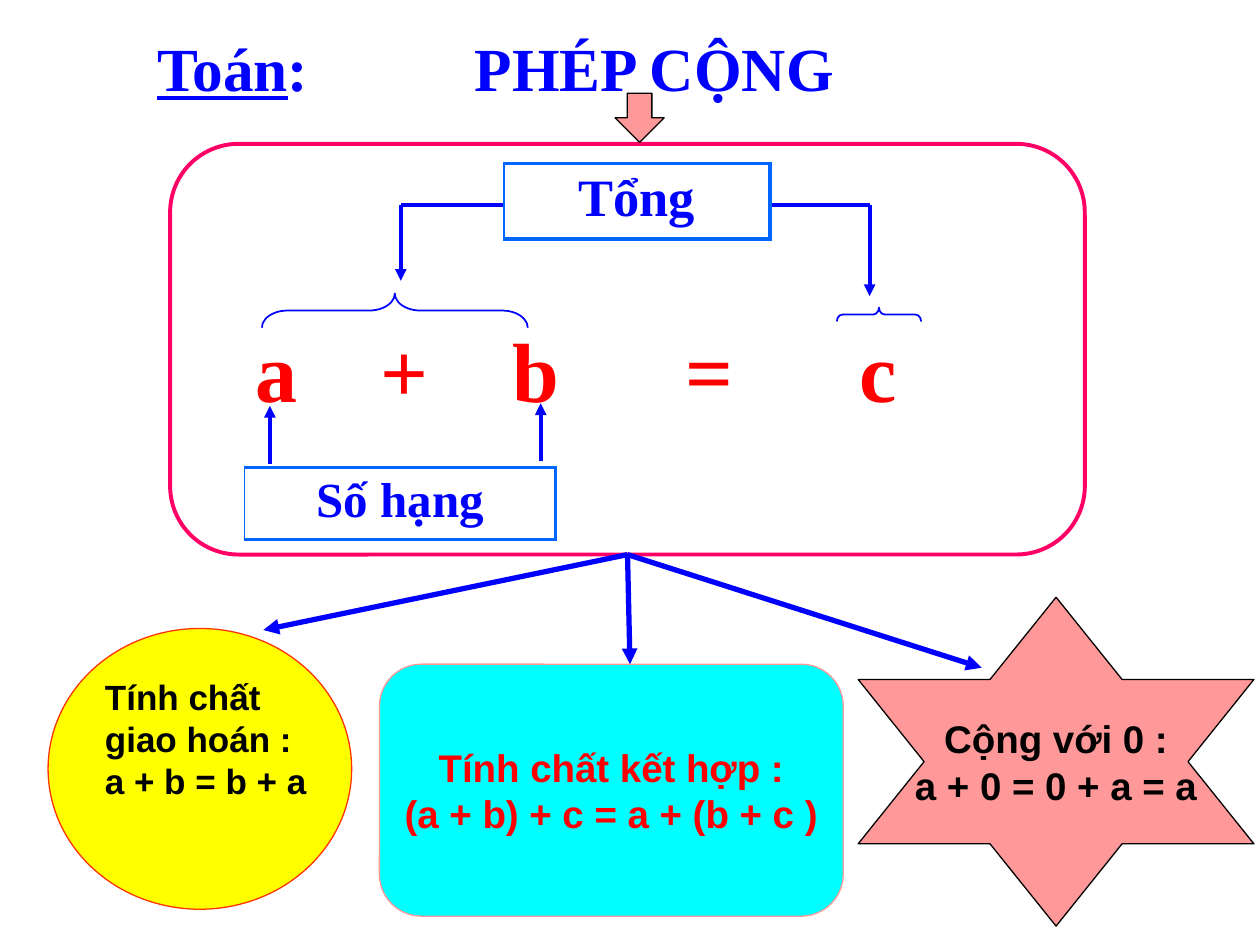
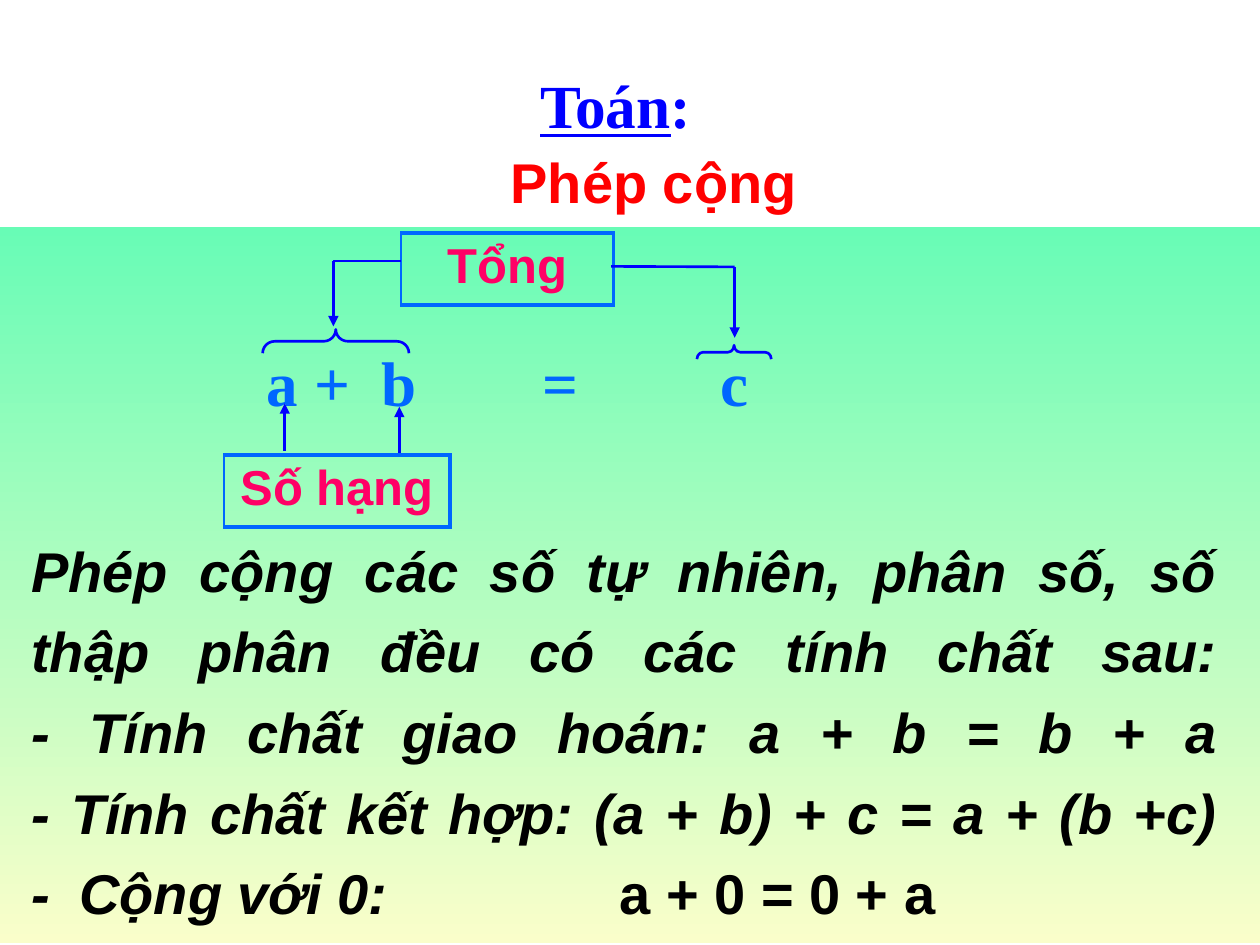
import collections

import pptx
import pptx.dml.color
import pptx.enum.shapes
import pptx.enum.text
import pptx.oxml
import pptx.oxml.ns
import pptx.util

BLUE = pptx.dml.color.RGBColor(0x00, 0x00, 0xFF)
SKY = pptx.dml.color.RGBColor(0x00, 0x66, 0xFF)
RED = pptx.dml.color.RGBColor(0xFF, 0x00, 0x00)
ROSE = pptx.dml.color.RGBColor(0xFF, 0x00, 0x66)
PINK = pptx.dml.color.RGBColor(0xFF, 0x99, 0x99)
FLAME = pptx.dml.color.RGBColor(0xFF, 0x33, 0x00)
YELLOW = pptx.dml.color.RGBColor(0xFF, 0xFF, 0x00)
CYAN = pptx.dml.color.RGBColor(0x00, 0xFF, 0xFF)
BLACK = pptx.dml.color.RGBColor(0x00, 0x00, 0x00)
MINT = pptx.dml.color.RGBColor(0x68, 0xFC, 0xB6)
CREAM = pptx.dml.color.RGBColor(0xFA, 0xFE, 0xCA)

Font = collections.namedtuple("Font", "name size color italic", defaults=[False])
SERIF, SANS = "Times New Roman", "Arial"
TITLE = Font(SERIF, 35, BLUE)
UNDER = {"underline": True}
FORMS = pptx.enum.shapes.MSO_SHAPE
ALIGN = pptx.enum.text.PP_ALIGN
ANCHOR = pptx.enum.text.MSO_ANCHOR


def cm(*sizes):
    """Turn centimetre numbers into lengths."""
    return [pptx.util.Cm(size) for size in sizes]


def node(tag, inner=""):
    """Make a DrawingML element from its tag with attributes."""
    space = pptx.oxml.ns.nsdecls("a")
    name = tag.split()[0]
    return pptx.oxml.parse_xml(f"<a:{tag} {space}>{inner}</a:{name}>")


class Deck:
    """Hold the shared style and the current slide."""

    def __init__(self):
        """Start an empty deck."""
        self.show = pptx.Presentation()
        self.show.slide_width, self.show.slide_height = cm(25.4, 19.05)

    def page(self):
        """Add a blank slide."""
        self.slide = self.show.slides.add_slide(self.show.slide_layouts[6])

    def words(self, frame, lines, font, align, tabs=(), soft=False):
        """Fill a frame with lines made of strings or (string, style) runs."""
        para = frame.paragraphs[0]
        for count, line in enumerate(lines):
            if count and soft:
                para.add_line_break()
            elif count:
                para = frame.add_paragraph()
            para.alignment = align
            for part in line if isinstance(line, list) else [line]:
                text, style = part if isinstance(part, tuple) else (part, {})
                run = para.add_run()
                run.text = text
                run.font.name = font.name
                run.font.size = pptx.util.Pt(font.size)
                run.font.color.rgb = font.color
                run.font.bold = True
                run.font.italic = style.get("italic", font.italic)
                run.font.underline = style.get("underline", False)
        if tabs:
            stops = "".join(f'<a:tab pos="{stop}" algn="l"/>' for stop in cm(*tabs))
            para._p.get_or_add_pPr().append(node("tabLst", stops))
        return para

    def text(self, place, lines, font, align=ALIGN.LEFT, tabs=(), anchor=ANCHOR.TOP, soft=False):
        """Add a wrapping text box."""
        frame = self.slide.shapes.add_textbox(*cm(*place)).text_frame
        frame.word_wrap = True
        frame.vertical_anchor = anchor
        return self.words(frame, lines, font, align, tabs, soft)

    def title(self, place, runs, align=ALIGN.CENTER, tabs=()):
        """Add the slide title."""
        self.text(place, [runs], TITLE, align, tabs, ANCHOR.MIDDLE)

    def shape(self, form, place, fill=None, edge=None, width=0.75):
        """Add a preset shape."""
        item = self.slide.shapes.add_shape(form, *cm(*place))
        item.shadow.inherit = False
        if fill is None:
            item.fill.background()
        else:
            item.fill.solid()
            item.fill.fore_color.rgb = fill
        if edge is None:
            item.line.fill.background()
        else:
            item.line.color.rgb = edge
            item.line.width = pptx.util.Pt(width)
        return item

    def badge(self, form, place, fill, edge, lines, font, align=ALIGN.CENTER, anchor=ANCHOR.MIDDLE):
        """Add a filled shape that carries a rule."""
        frame = self.shape(form, place, fill, edge).text_frame
        frame.word_wrap = False
        frame.vertical_anchor = anchor
        self.words(frame, lines, font, align)

    def band(self, place, top, base):
        """Add a rectangle that fades downwards."""
        fill = self.shape(FORMS.RECTANGLE, place).fill
        fill.gradient()
        fill.gradient_angle = 270
        for stop, color, spot in zip(fill.gradient_stops, (top, base), (0, 1)):
            stop.color.rgb = color
            stop.position = spot

    def brace(self, x, y, span, depth, curve, width):
        """Add a brace that opens downwards, centred on x and y."""
        place = (x - depth / 2, y - span / 2, depth, span)
        item = self.shape(FORMS.RIGHT_BRACE, place, None, BLUE, width)
        item.rotation = 270
        item.adjustments[0] = curve

    def line(self, start, end, width, arrow=True, source=None):
        """Add a straight line, from the base of source if given."""
        kind = pptx.enum.shapes.MSO_CONNECTOR.STRAIGHT
        item = self.slide.shapes.add_connector(kind, *cm(*start, *end))
        if source is not None:
            item.begin_connect(source, 2)
        item.line.color.rgb = BLUE
        item.line.width = pptx.util.Pt(width)
        if arrow:
            item.line._get_or_add_ln().append(node('tailEnd type="triangle"'))
        item._element.spPr.append(node("effectLst"))

    def bend(self, start, turn, end, width):
        """Add two lines with an arrowhead on the second."""
        self.line(start, turn, width, False)
        self.line(turn, end, width)

    def label(self, place, word, font):
        """Add a framed one-cell table."""
        table = self.slide.shapes.add_table(1, 1, *cm(*place)).table
        table.first_row = table.horz_banding = False
        cell = table.cell(0, 0)
        props = cell._tc.get_or_add_tcPr()
        for side, width in zip("LRTB", (1, 2.25, 2.25, 2.25)):
            paint = f'<a:solidFill><a:srgbClr val="{SKY}"/></a:solidFill>'
            props.append(node(f'ln{side} w="{pptx.util.Pt(width)}"', paint))
        cell.fill.background()
        self.words(cell.text_frame, [word], font, ALIGN.CENTER)


def rules(deck):
    """Build the slide that maps addition and its three rules."""
    deck.page()
    deck.label((10.16, 3.3, 5.36, 1.52), "Tổng", Font(SERIF, 30, BLUE))
    deck.text((4.47, 6.3, 14.86, 2.16), ["\ta\t+\tb\t=\tc"], Font(SERIF, 48, RED),
              tabs=(0.43, 2.96, 5.61, 9.09, 12.6))
    deck.brace(7.96, 6.26, 5.36, 0.69, 0.75, 1)
    deck.brace(17.72, 6.34, 1.7, 0.28, 0.41, 1)
    deck.bend((10.13, 4.14), (8.08, 4.14), (8.08, 5.66), 2.25)
    deck.bend((15.57, 4.14), (17.53, 4.14), (17.53, 5.97), 2.25)
    deck.line((10.9, 9.3), (10.9, 8.13), 2.25)
    deck.line((5.44, 9.35), (5.44, 8.18), 2.25)
    deck.label((4.93, 9.42, 6.27, 1.45), "Số hạng", Font(SERIF, 28, BLUE))
    deck.title((0.38, 0, 19.25, 2.69), ["\t", ("Toán", UNDER), ":\tPHÉP CỘNG"],
               ALIGN.LEFT, (2.54, 8.94))
    deck.badge(FORMS.OVAL, (0.97, 12.67, 6.12, 5.66), YELLOW, FLAME,
               ["Tính chất", "giao hoán :", "a + b = b + a"],
               Font(SANS, 20, BLACK), ALIGN.LEFT, ANCHOR.TOP)
    deck.badge(FORMS.ROUNDED_RECTANGLE, (7.65, 13.39, 9.35, 5.08), CYAN, PINK,
               ["Tính chất kết hợp :", "(a + b) + c = a + (b + c )"], Font(SANS, 22, RED))
    deck.badge(FORMS.STAR_6_POINT, (17.3, 12.04, 7.98, 6.63), PINK, BLACK,
               ["Cộng với 0 :", "a + 0 = 0 + a = a"], Font(SANS, 22, BLACK))
    frame = deck.shape(FORMS.ROUNDED_RECTANGLE, (3.43, 2.9, 18.44, 8.28), None, ROSE, 2.25)
    deck.shape(FORMS.DOWN_ARROW, (12.4, 1.88, 0.99, 0.99), PINK, BLACK)
    for end in ((5.31, 12.7), (12.7, 13.39), (19.79, 13.46)):
        deck.line((12.65, 11.18), end, 3, source=frame)


def recap(deck):
    """Build the slide that sums up addition in words."""
    deck.page()
    deck.band((0, 4.57, 25.4, 14.45), MINT, CREAM)
    body = deck.text(
        (0.38, 10.59, 24.43, 8.03),
        ["Phép cộng các số tự nhiên, phân số, số thập phân đều có các tính chất sau:",
         "- Tính chất giao hoán: a + b = b + a",
         "- Tính chất kết hợp: (a + b) + c = a + (b +c)",
         ["-\tCộng với 0:", ("\ta + 0 = 0 + a", {"italic": False})]],
        Font(SANS, 32, BLACK, True), ALIGN.JUSTIFY, (0.97, 11.86), ANCHOR.MIDDLE, True)
    body.line_spacing = 1.2
    tag = Font(SANS, 28, ROSE)
    deck.label((8.08, 4.7, 4.29, 1.45), "Tổng", tag)
    deck.text((3.43, 6.8, 12.09, 1.78), ["\ta +\tb\t=\tc"], Font(SERIF, 36, SKY),
              tabs=(1.7, 4.01, 7.26, 10.85))
    deck.brace(6.77, 6.88, 2.95, 0.48, 0.51, 1.5)
    deck.brace(14.8, 7.1, 1.5, 0.28, 0.44, 1.5)
    deck.bend((8.08, 5.26), (6.72, 5.26), (6.72, 6.58), 1.5)
    deck.bend((12.32, 5.37), (14.81, 5.38), (14.81, 6.81), 1.5)
    deck.line((5.74, 9.09), (5.74, 8.13), 1.5)
    deck.line((8.05, 9.14), (8.05, 8.2), 1.5)
    deck.label((4.52, 9.17, 4.55, 1.45), "Số hạng", tag)
    deck.text((7.77, 2.84, 10.82, 1.6), ["Phép cộng"], Font(SANS, 32, RED), ALIGN.CENTER)
    deck.title((1.73, 0.76, 21.36, 2.69), [("Toán", UNDER), ":"])


def main():
    """Build and save the deck."""
    deck = Deck()
    rules(deck)
    recap(deck)
    deck.show.save("out.pptx")


if __name__ == "__main__":
    main()
